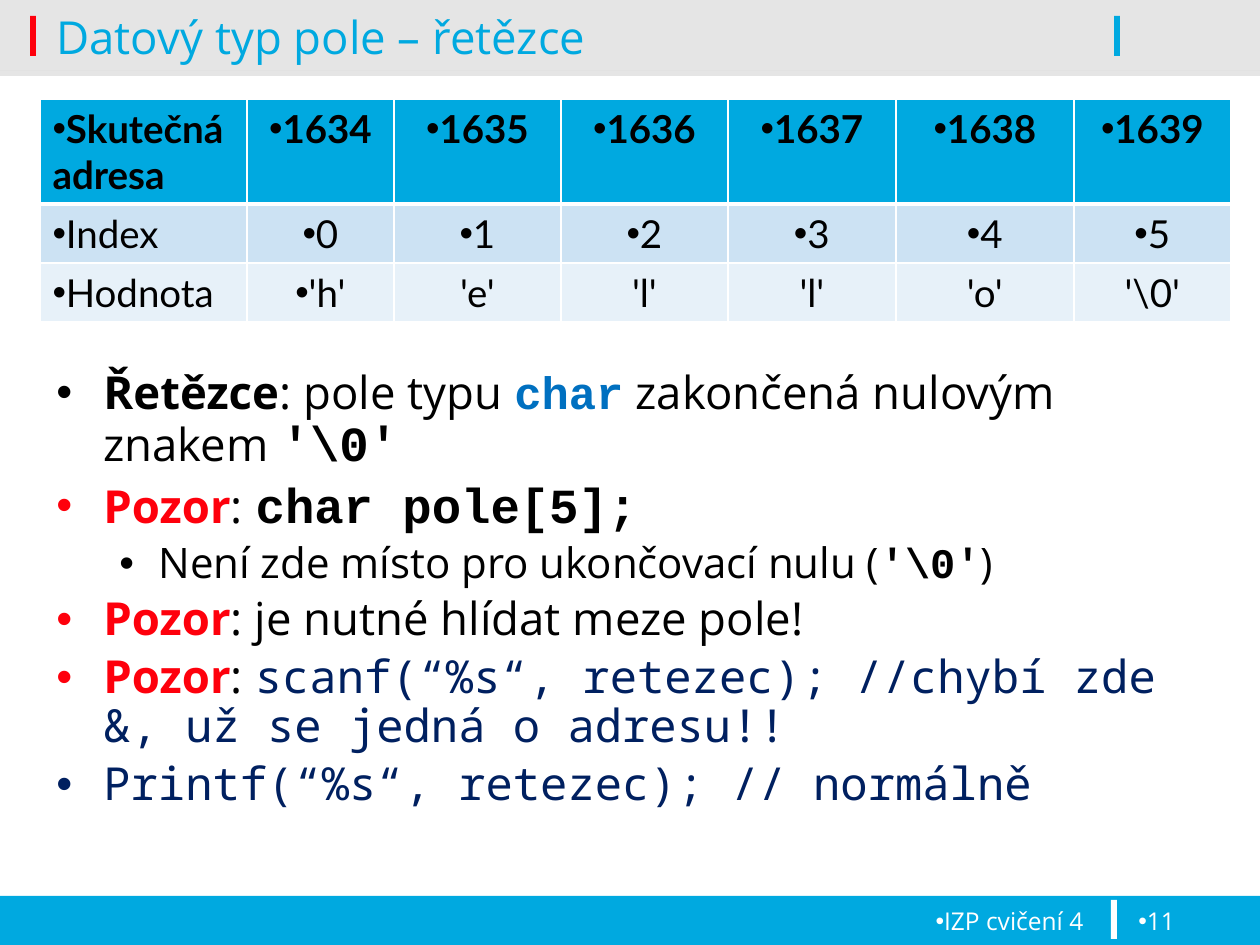
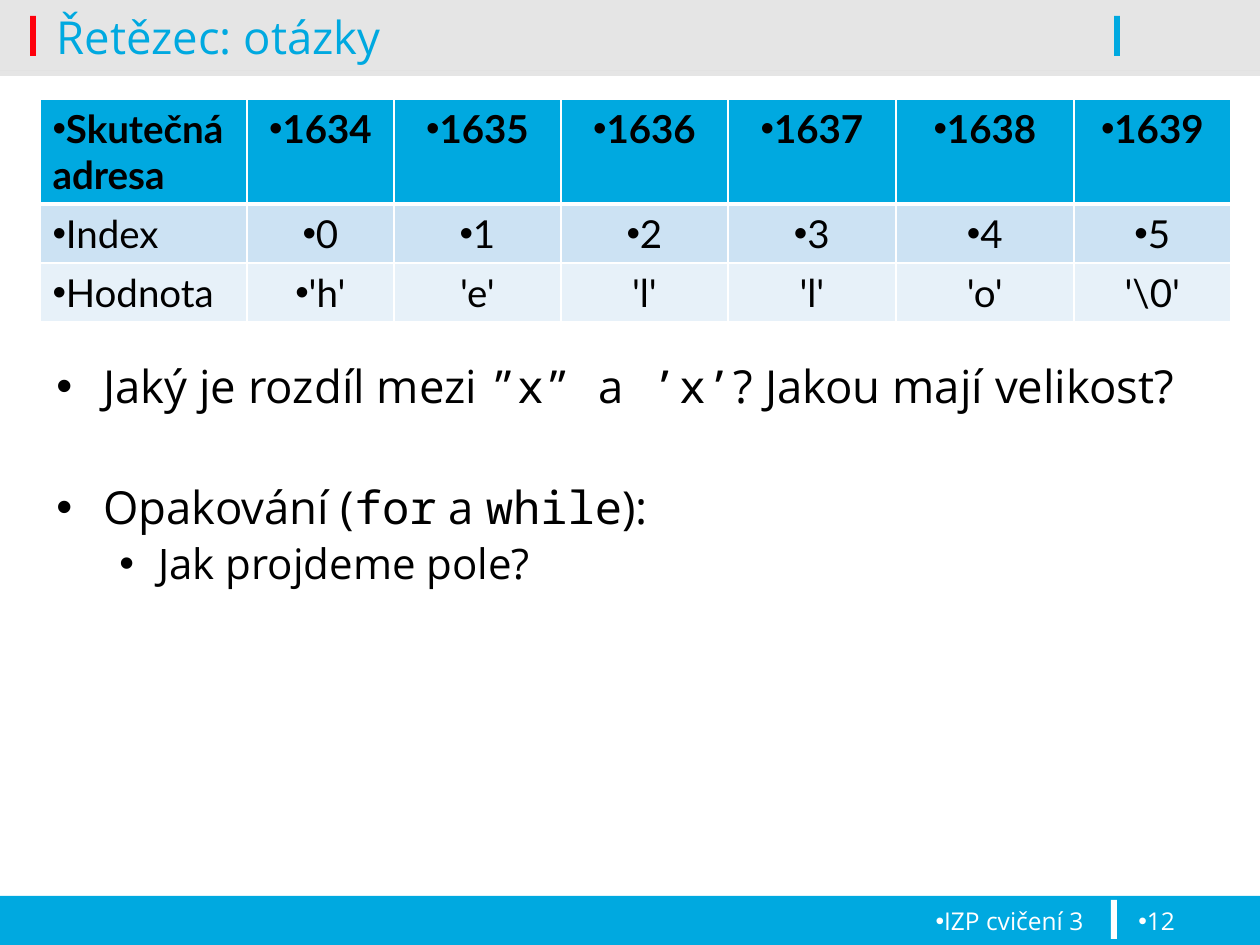
import pptx
import pptx.util
import pptx.dml.color
import pptx.enum.shapes
import pptx.enum.text
import pptx.oxml
import pptx.oxml.ns
import lxml.etree

HUES = {
    "sky": "00A9E0", "red": "FE000C", "white": "FFFFFF", "black": "000000",
    "blue": "0070C0", "navy": "002060", "pale": "CCE2F3", "mist": "E7F1F9",
}
SANS, MONO, CODE, GRID = "Open Sans", "Noto Sans Mono", "Courier New", "Lato"
ALIGN = pptx.enum.text.PP_ALIGN
WIDE, HIGH = 1260, 945
COLS = (207, 147, 167, 167, 168, 178, 157)
ROWS = (105, 59, 58)
CELLS = (
    ("Skutečná adresa", "1634", "1635", "1636", "1637", "1638", "1639"),
    ("Index", "0", "1", "2", "3", "4", "5"),
    ("Hodnota", "'h'", "'e'", "'l'", "'l'", "'o'", "'\\0'"),
)
FILLS = ("sky", "pale", "mist")


def px(num):
    return pptx.util.Emu(round(num * 914400 / 126))


def tint(hue):
    return pptx.dml.color.RGBColor.from_string(HUES[hue])


def child(node, tag, **attrs):
    return lxml.etree.SubElement(node, pptx.oxml.ns.qn(tag), **attrs)


def block(slide, box, hue, alpha=None):
    shape = slide.shapes.add_shape(
        pptx.enum.shapes.MSO_SHAPE.RECTANGLE, *map(px, box))
    shape.shadow.inherit = False
    shape.fill.solid()
    shape.fill.fore_color.rgb = tint(hue)
    shape.line.fill.background()
    if alpha:
        color = next(shape._element.spPr.iter(pptx.oxml.ns.qn("a:srgbClr")))
        child(color, "a:alpha", val=str(alpha * 1000))


def bullet(para, left=0, hang=0):
    props = para._p.get_or_add_pPr()
    props.set("marL", str(px(left)))
    props.set("indent", str(-px(hang)))
    child(props, "a:buFont", typeface="Arial")
    child(props, "a:buChar", char="•")


def write(para, text, size, face=SANS, hue="black", bold=False):
    run = para.add_run()
    run.text = text
    font = run.font
    font.size = pptx.util.Pt(size)
    font.name = face
    font.bold = bold
    font.color.rgb = tint(hue)
    for tag in ("a:ea", "a:cs"):
        child(run._r.get_or_add_rPr(), tag, typeface=face)


def frame(slide, box):
    area = slide.shapes.add_textbox(*map(px, box)).text_frame
    area.word_wrap = True
    return area


def header(slide, title):
    block(slide, (0, 71, WIDE, 5), "black", 10)
    block(slide, (0, 0, WIDE, 71), "black", 10)
    block(slide, (30, 16, 6, 40), "red")
    block(slide, (1114, 16, 6, 40), "sky")
    area = frame(slide, (44, -14, 1061, 100))
    area.vertical_anchor = pptx.enum.text.MSO_ANCHOR.MIDDLE
    write(area.paragraphs[0], title, 26, hue="sky")


def footer(slide, name, page):
    block(slide, (0, 896, WIDE, HIGH - 896), "sky")
    block(slide, (1111, 900, 6, 39), "white")
    for text, left, wide, align in (
            (name, 15, 1081, ALIGN.RIGHT), (page, 1126, 113, ALIGN.LEFT)):
        para = frame(slide, (left, 900, wide, 45)).paragraphs[0]
        bullet(para)
        para.alignment = align
        write(para, text, 14, hue="white")


def border(cell, row):
    props = cell._tc.get_or_add_tcPr()
    thick = {(0, "B"), (1, "T")}
    for spot, side in enumerate("LRTB"):
        width = 3 if (row, side) in thick else 1
        line = pptx.oxml.parse_xml(
            f'<a:ln{side} {pptx.oxml.ns.nsdecls("a")} w="{width * 12700}">'
            f'<a:solidFill><a:srgbClr val="{HUES["white"]}"/></a:solidFill>'
            f'</a:ln{side}>')
        props.insert(spot, line)


def table(slide, left, top):
    grid = slide.shapes.add_table(
        len(ROWS), len(COLS), px(left), px(top),
        px(sum(COLS)), px(sum(ROWS))).table
    for col, wide in zip(grid.columns, COLS):
        col.width = px(wide)
    for row, (line, high) in enumerate(zip(CELLS, ROWS)):
        grid.rows[row].height = px(high)
        for col, text in enumerate(line):
            cell = grid.cell(row, col)
            cell.fill.solid()
            cell.fill.fore_color.rgb = tint(FILLS[row])
            border(cell, row)
            para = cell.text_frame.paragraphs[0]
            if row < 2 or col < 2:
                bullet(para)
            para.alignment = ALIGN.CENTER if col else ALIGN.LEFT
            write(para, text, 22, GRID, bold=row == 0)


def body(slide, box, items):
    area = frame(slide, box)
    for spot, (level, gap, runs) in enumerate(items):
        para = area.add_paragraph() if spot else area.paragraphs[0]
        bullet(para, *((102, 39) if level else (47, 47)))
        para.level = level
        para.line_spacing = 0.9
        para.space_before = pptx.util.Pt(gap)
        for text, *look in runs:
            write(para, text, *(look or [24 if level else 26]))


def page(deck, title, name, number, top, items):
    slide = deck.slides.add_slide(deck.slide_layouts[6])
    header(slide, title)
    footer(slide, name, number)
    body(slide, (44, top, 1191, 840 - top), items)
    table(slide, 40, 99)


def main():
    deck = pptx.Presentation()
    deck.slide_width, deck.slide_height = px(WIDE), px(HIGH)
    warn = ("Pozor", 26, SANS, "red", True)
    page(deck, "Datový typ pole – řetězce", "IZP cvičení 4", "11", 364, (
        (0, 0, (("Řetězce", 26, SANS, "black", True), (": pole typu ",),
                ("char", 26, CODE, "blue", True),
                (" zakončená nulovým znakem ",),
                ("'\\0'", 28, CODE, "black", True))),
        (0, 5, (warn, (":",), (" ", 28),
                ("char pole[5];", 28, CODE, "black", True))),
        (1, 5, (("Není zde místo pro ukončovací nulu (",),
                ("'\\0'", 24, CODE, "black", True), (")",))),
        (0, 5, (warn, (": je nutné hlídat meze pole!",))),
        (0, 5, (warn, (": ",),
                ("scanf(“%s“, retezec); //chybí zde &, už se jedná o adresu!!",
                 26, MONO, "navy"))),
        (0, 5, (("Printf(“%s“, retezec); // normálně", 26, MONO, "navy"),)),
    ))
    page(deck, "Řetězec: otázky", "IZP cvičení 3", "12", 358, (
        (0, 0, (("Jaký je rozdíl mezi ",), ("”x” ", 26, MONO), ("a",),
                (" ’x’", 26, MONO), ("? Jakou mají velikost?",))),
        (0, 41, (("Opakování (",), ("for", 26, MONO), (" a ",),
                 ("while", 26, MONO), ("):",))),
        (1, 5, (("Jak projdeme pole?",),)),
    ))
    deck.save("out.pptx")


if __name__ == "__main__":
    main()
